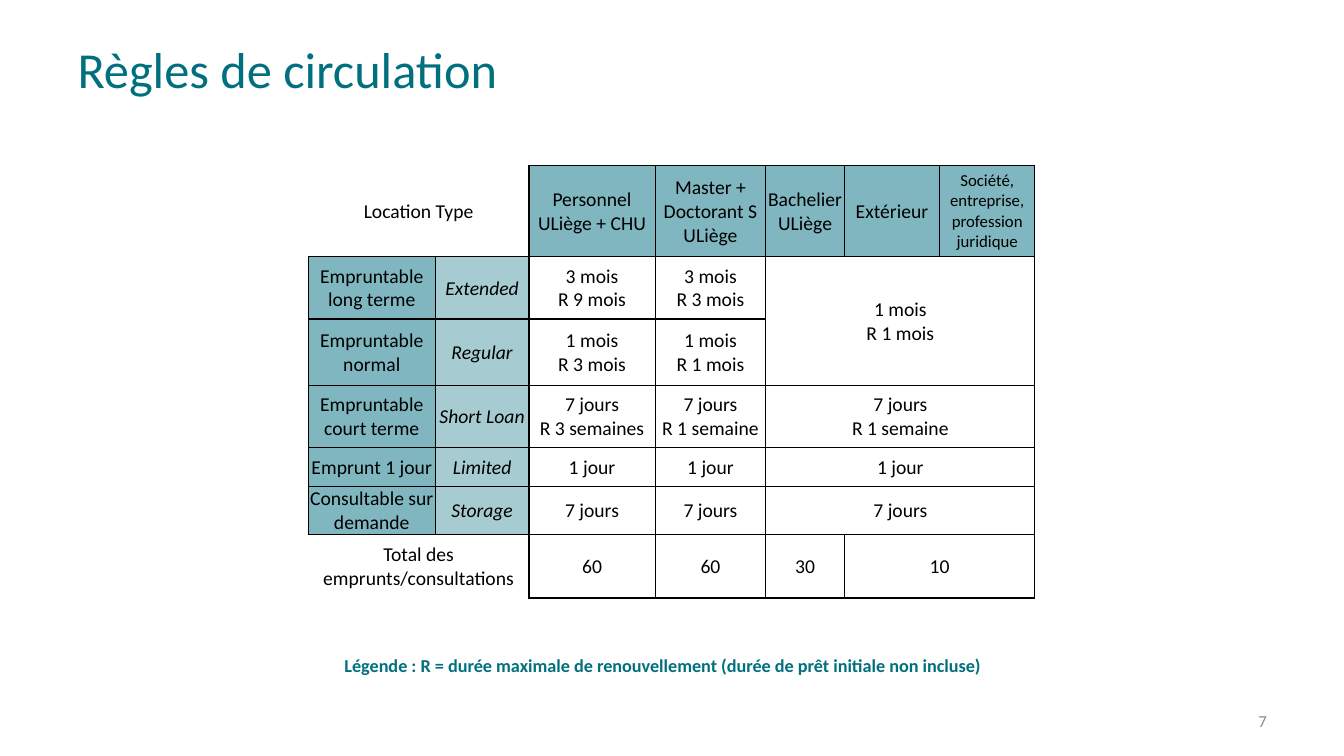
from lxml import etree
from pptx import Presentation
from pptx.dml.color import RGBColor
from pptx.enum import text as t
from pptx.oxml.ns import qn
from pptx.util import Cm, Pt

HUES = {"teal": "00707F", "head": "7FB6BF", "kind": "A6CCD2",
        "ink": "000000", "gray": "8C8C8C"}
TITLE = "Règles de circulation"
NOTE = "Légende : R = durée maximale de renouvellement (durée de prêt initiale non incluse)"
PAGE = "7"
GRID = [
    ["Location Type", None, "Personnel\nULiège + CHU", "Master +\nDoctorant S\nULiège",
     "Bachelier\nULiège", "Extérieur", "Société,\nentreprise,\nprofession\njuridique"],
    ["Empruntable\nlong terme", "Extended", "3 mois\nR 9 mois", "3 mois\nR 3 mois",
     "1 mois\nR 1 mois", None, None],
    ["Empruntable\nnormal", "Regular", "1 mois\nR 3 mois", "1 mois\nR 1 mois",
     None, None, None],
    ["Empruntable\ncourt terme", "Short Loan", "7 jours\nR 3 semaines",
     "7 jours\nR 1 semaine", "7 jours\nR 1 semaine", None, None],
    ["Emprunt 1 jour", "Limited", "1 jour", "1 jour", "1 jour", None, None],
    ["Consultable sur\ndemande", "Storage", "7 jours", "7 jours", "7 jours", None, None],
    ["Total des\nemprunts/consultations", None, "60", "60", "30", "10", None],
]
SPANS = {(0, 0): (1, 2), (1, 4): (2, 3), (3, 4): (1, 3), (4, 4): (1, 3),
         (5, 4): (1, 3), (6, 0): (1, 2), (6, 5): (1, 2)}
COLS = [3.2, 2.36, 3.18, 2.79, 1.98, 2.4, 2.4]
ROWS = [2.29, 1.58, 1.67, 1.57, 0.97, 1.14, 1.6]
LAST = len(ROWS) - 1


def write(frame, words, size=14, hue="ink", bold=False, ital=False, side="CENTER"):
    para = frame.paragraphs[0]
    para.text = words.replace("\n", "\v")
    para.alignment = getattr(t.PP_ALIGN, side)
    for font in [para.font] + [run.font for run in para.runs]:
        font.name, font.size = "Calibri", Pt(size)
        font.bold, font.italic = bold, ital
        font.color.rgb = RGBColor.from_string(HUES[hue])


def label(slide, box, words, anchor="TOP", **form):
    frame = slide.shapes.add_textbox(*map(Cm, box)).text_frame
    frame.word_wrap = True
    frame.vertical_anchor = getattr(t.MSO_ANCHOR, anchor)
    write(frame, words, **form)


def edge(cell, sides):
    props = cell._tc.get_or_add_tcPr()
    for side in "LRTB":
        line = etree.SubElement(props, qn("a:ln" + side), w=str(Pt(1)))
        if side in sides:
            fill = etree.SubElement(line, qn("a:solidFill"))
            etree.SubElement(fill, qn("a:srgbClr"), val=HUES["ink"])
        else:
            etree.SubElement(line, qn("a:noFill"))


def shade(row, col):
    if row == 0 and col > 1 or col == 0 and 0 < row < LAST:
        return "head"
    return "kind" if col == 1 and 0 < row < LAST else None


def block(row, col):
    for (top, left), (high, wide) in SPANS.items():
        if top <= row < top + high and left <= col < left + wide:
            return top, left, high, wide
    return row, col, 1, 1


def borders(row, col):
    top, left, high, wide = block(row, col)
    if (row, col) == (top, left):
        sides = "LRTB"
    else:
        tests = {"L": col == left, "R": col == left + wide - 1,
                 "T": row == top, "B": row == top + high - 1}
        sides = "".join(side for side, outer in tests.items() if outer)
    bare = {(0, 0): "LT", (LAST, 0): "LB"}.get((top, left), "")
    return [side for side in sides if side not in bare]


def rules(slide):
    table = slide.shapes.add_table(len(ROWS), len(COLS), Cm(7.77), Cm(4.17),
                                   Cm(sum(COLS)), Cm(sum(ROWS))).table
    table.first_row = table.horz_banding = False
    for col, wide in zip(table.columns, COLS):
        col.width = Cm(wide)
    for row, high in zip(table.rows, ROWS):
        row.height = Cm(high)
    for (row, col), (high, wide) in SPANS.items():
        table.cell(row, col).merge(table.cell(row + high - 1, col + wide - 1))
    for row, line in enumerate(GRID):
        for col, words in enumerate(line):
            cell = table.cell(row, col)
            edge(cell, borders(row, col))
            hue = shade(row, col)
            if hue:
                cell.fill.solid()
                cell.fill.fore_color.rgb = RGBColor.from_string(HUES[hue])
            else:
                cell.fill.background()
            cell.margin_left = cell.margin_right = cell.margin_top = Cm(0.03)
            cell.margin_bottom = 0
            cell.vertical_anchor = t.MSO_ANCHOR.MIDDLE
            if words:
                write(cell.text_frame, words, size=12 if (row, col) == (0, 6) else 14,
                      ital=hue == "kind")


def main():
    deck = Presentation()
    deck.slide_width, deck.slide_height = Cm(33.87), Cm(19.05)
    slide = deck.slides.add_slide(deck.slide_layouts[5])
    title = slide.shapes.title
    title.left, title.top, title.width, title.height = map(Cm, (1.7, 0.86, 30.48, 1.73))
    title.text_frame.vertical_anchor = t.MSO_ANCHOR.MIDDLE
    write(title.text_frame, TITLE, size=36, hue="teal", side="LEFT")
    label(slide, (24.28, 17.65, 7.9, 1.02), PAGE, anchor="MIDDLE",
          size=12, hue="gray", side="RIGHT")
    label(slide, (8.43, 16.36, 17, 0.86), NOTE, size=13, hue="teal",
          bold=True, side="LEFT")
    rules(slide)
    deck.save("out.pptx")


if __name__ == "__main__":
    main()
